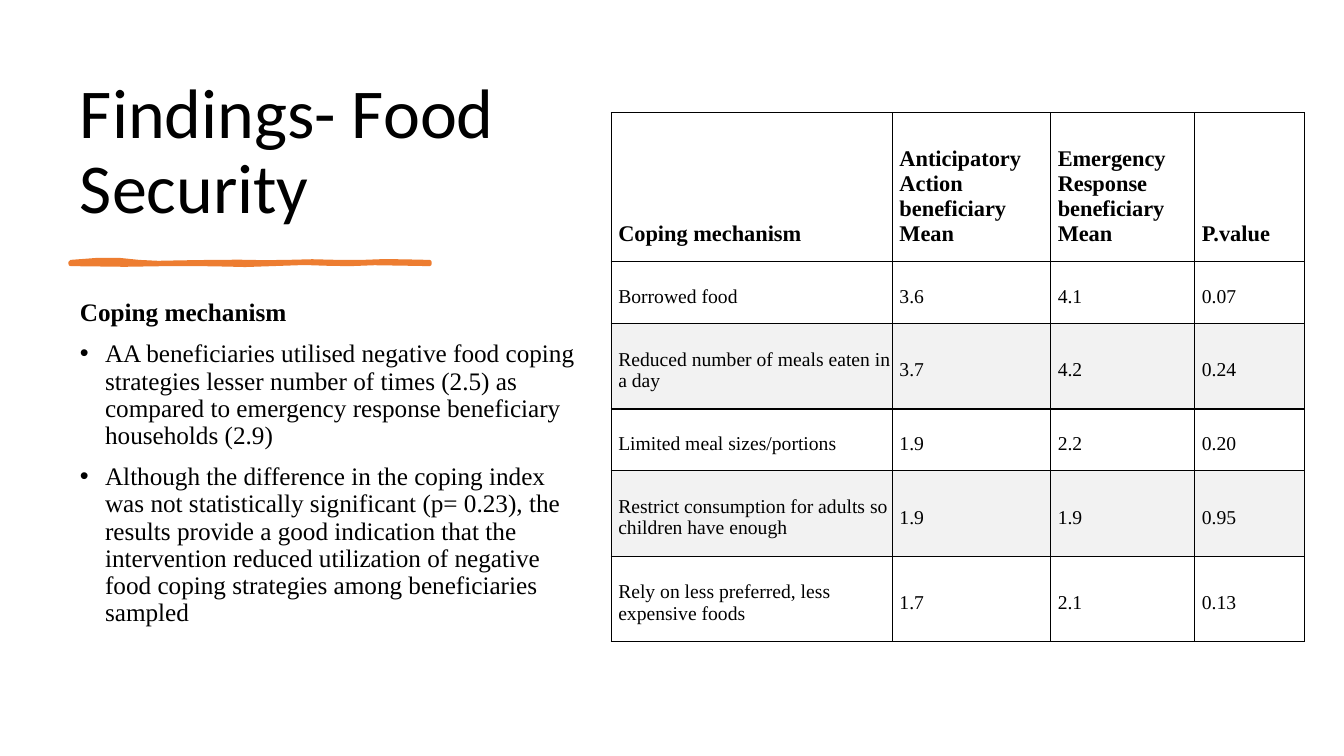
from itertools import accumulate
from lxml.etree import SubElement
from pptx import Presentation
from pptx.dml.color import RGBColor
from pptx.enum.text import MSO_ANCHOR
from pptx.oxml.ns import qn
from pptx.util import Inches, Pt

WIDE, HIGH = Inches(13.33), Inches(7.5)
SERIF = "Times New Roman"
TITLE = "Findings- Food Security"
HEAD = "Coping mechanism"
POINTS = [
    "AA beneficiaries utilised negative food coping strategies lesser number of times (2.5) "
    "as compared to emergency response beneficiary households (2.9)",
    "Although the difference in the coping index was not statistically significant (p= 0.23), "
    "the results provide a good indication that the intervention reduced utilization of "
    "negative food coping strategies among beneficiaries sampled",
]
ROWS = [
    (HEAD, "Anticipatory Action beneficiary Mean",
     "Emergency Response beneficiary Mean", "P.value"),
    ("Borrowed food", "3.6", "4.1", "0.07"),
    ("Reduced number of meals eaten in a day", "3.7", "4.2", "0.24"),
    ("Limited meal sizes/portions", "1.9", "2.2", "0.20"),
    ("Restrict consumption for adults so children have enough", "1.9", "1.9", "0.95"),
    ("Rely on less preferred, less expensive foods", "1.7", "2.1", "0.13"),
]
WAVE = [
    (0, 0), (27, -3), (51, -3), (68, 0), (85, 2), (107, 0), (139, 0),
    (171, -1), (190, 1), (214, 0), (238, -2), (269, 1), (289, 0),
    (309, -2), (342, 0), (356, 0), (356, 0), (356, 1), (356, 2),
    (338, 2), (294, 0), (278, 2), (262, 3), (234, -1), (200, 2),
    (165, 4), (161, 2), (129, 2), (96, 1), (62, 4), (0, 2),
]


def grid(*cells):
    """Turn columns and rows of a 48 by 27 grid into a box."""
    return [round(n * (HIGH / 27 if i % 2 else WIDE / 48)) for i, n in enumerate(cells)]


def paint(code):
    """Make a colour from a hex string."""
    return RGBColor.from_string(code)


def write(para, text, size=18, font=SERIF, bold=False, space=0, line=None, dot=False):
    """Write one formatted paragraph."""
    run = para.add_run()
    run.text = text
    run.font.size, run.font.name, run.font.bold = Pt(size), font, bold
    run.font.color.rgb = paint("000000")
    para.space_before = Pt(space)
    if line:
        para.line_spacing = line
    if dot:
        props = para._p.get_or_add_pPr()
        props.set("marL", str(Inches(0.25)))
        props.set("indent", str(-Inches(0.25)))
        SubElement(props, qn("a:buFont"), typeface="Arial")
        SubElement(props, qn("a:buChar"), char="•")


def frame(slide, box, anchor):
    """Add a wrapping text box and give its frame."""
    text = slide.shapes.add_textbox(*box).text_frame
    text.word_wrap, text.vertical_anchor = True, anchor
    return text


def header(slide, box):
    """Place the slide title."""
    text = frame(slide, box, MSO_ANCHOR.BOTTOM)
    write(text.paragraphs[0], TITLE, size=50, font="Calibri", line=0.9)


def curve(knots, steps=3):
    """Sample a chain of cubic curves."""
    for i in range(0, len(knots) - 3, 3):
        for k in range(1, steps + 1):
            t = k / steps
            shares = (1 - t) ** 3, 3 * t * (1 - t) ** 2, 3 * t * t * (1 - t), t ** 3
            yield tuple(sum(s * p[j] for s, p in zip(shares, knots[i:i + 4]))
                        for j in (0, 1))


def stroke(slide, box):
    """Draw the hand-drawn rule across the box."""
    left, top, width = box
    unit = width / 356
    pen = slide.shapes.build_freeform(0, 0)
    pen.add_line_segments([(x * unit, y * unit) for x, y in curve(WAVE)], close=True)
    shape = pen.convert_to_shape(left, top)
    shape.shadow.inherit = False
    shape.fill.solid()
    shape.fill.fore_color.rgb = shape.line.color.rgb = paint("ED7D31")
    shape.line.width = Pt(3)


def body(slide, box):
    """Place the heading and its bullets."""
    text = frame(slide, box, MSO_ANCHOR.TOP)
    write(text.paragraphs[0], HEAD, bold=True, space=10, line=0.9)
    for point in POINTS:
        write(text.add_paragraph(), point, space=10, line=0.9, dot=True)


def border(cell):
    """Rule all four sides of a cell in black."""
    props = cell._tc.get_or_add_tcPr()
    for side in ("lnL", "lnR", "lnT", "lnB"):
        line = SubElement(props, qn("a:" + side), w=str(Pt(1)))
        fill = SubElement(line, qn("a:solidFill"))
        SubElement(fill, qn("a:srgbClr"), val="000000")


def results(slide, box):
    """Place the table of means, whose rows grow from the box to fit their text."""
    left, top, width, height = box
    table = slide.shapes.add_table(len(ROWS), len(ROWS[0]), *box).table
    table.first_row = table.horz_banding = False
    for parts, total, lines, name in (
            ((279, 157, 143, 109), width, table.columns, "width"),
            ((120, 44, 59, 44, 59, 59), height, table.rows, "height")):
        ends = [round(total * n / sum(parts)) for n in accumulate(parts, initial=0)]
        for line, start, end in zip(lines, ends, ends[1:]):
            setattr(line, name, end - start)
    for r, row in enumerate(ROWS):
        top_row = r == 0
        for c, text in enumerate(row):
            cell = table.cell(r, c)
            cell.margin_left, cell.margin_right = Inches(0.07), 0
            cell.margin_top = Inches(0.26 if top_row else 0.23)
            cell.margin_bottom = Inches(0.15)
            cell.vertical_anchor = MSO_ANCHOR.BOTTOM if top_row else MSO_ANCHOR.MIDDLE
            border(cell)
            if r in (2, 4):
                cell.fill.solid()
                cell.fill.fore_color.rgb = paint("F2F2F2")
            else:
                cell.fill.background()
            write(cell.text_frame.paragraphs[0], text,
                  size=16 if top_row else 14, bold=top_row)


def main():
    """Build and save the slide."""
    deck = Presentation()
    deck.slide_width, deck.slide_height = WIDE, HIGH
    slide = deck.slides.add_slide(deck.slide_layouts[6])
    header(slide, grid(2.5, 2.5, 19, 5.85))
    stroke(slide, grid(2.52, 9.36, 12.82))
    body(slide, grid(2.5, 10.53, 18.75, 14))
    results(slide, grid(21.83, 4.03, 24.77, 13.86))
    deck.save("out.pptx")


if __name__ == "__main__":
    main()
